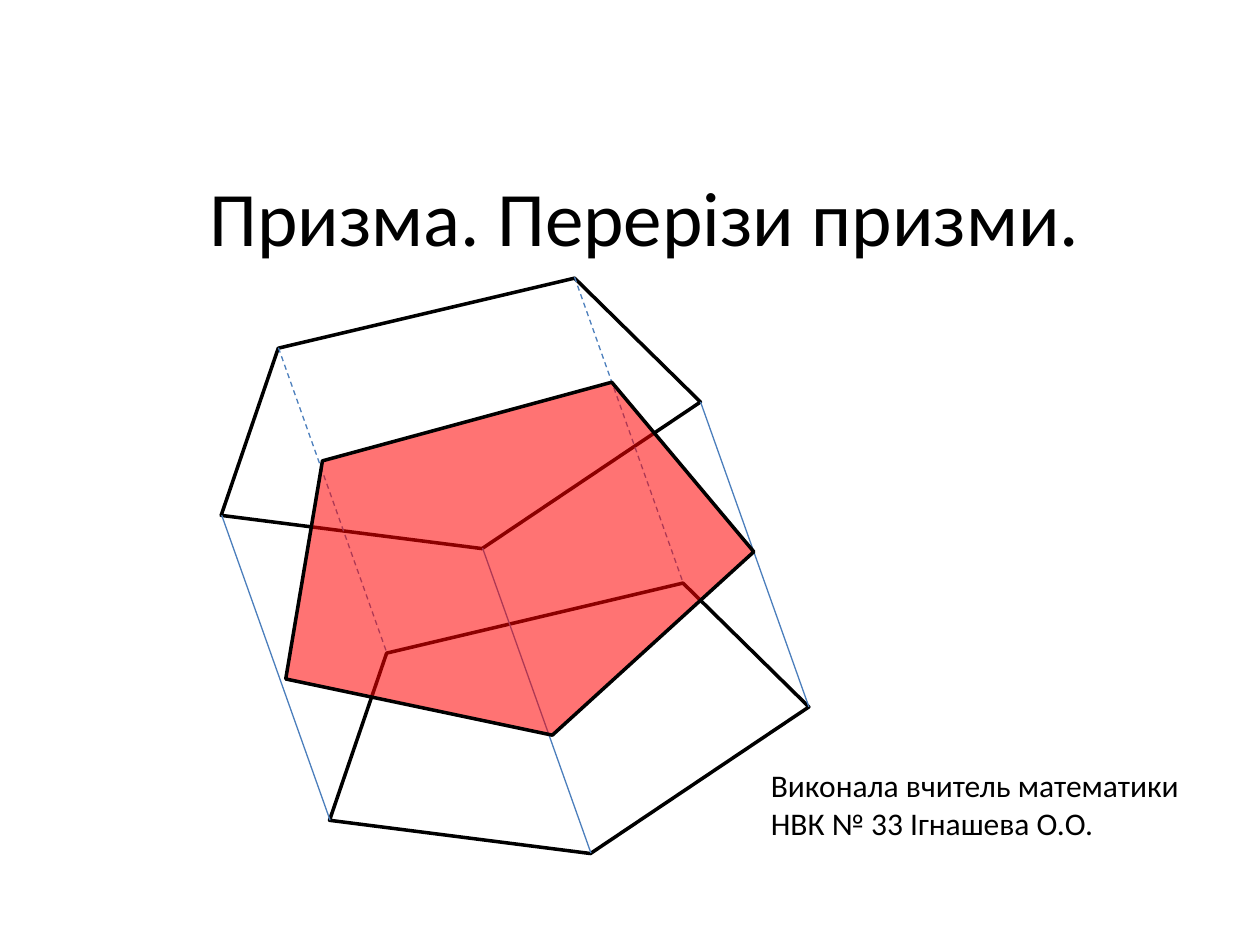
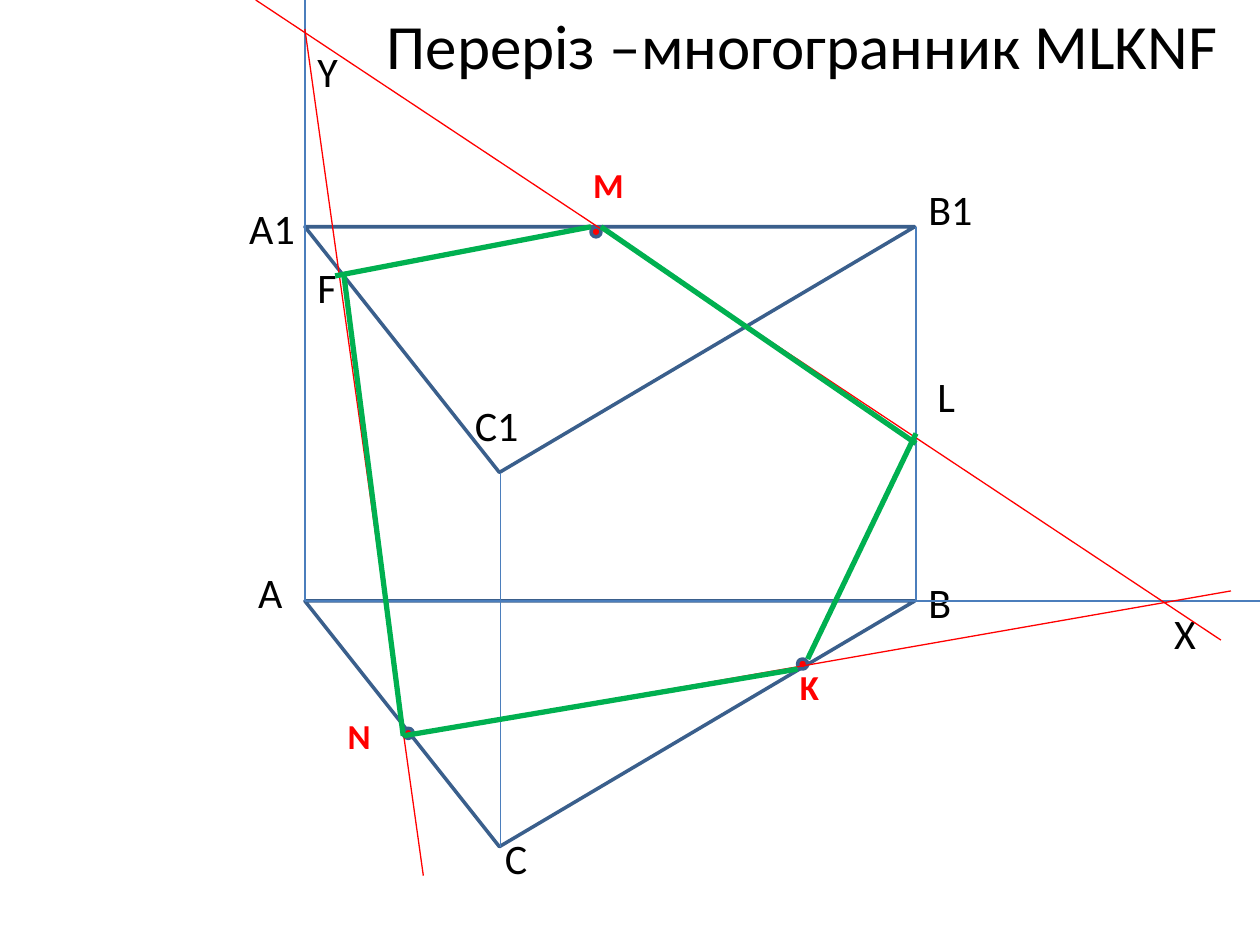
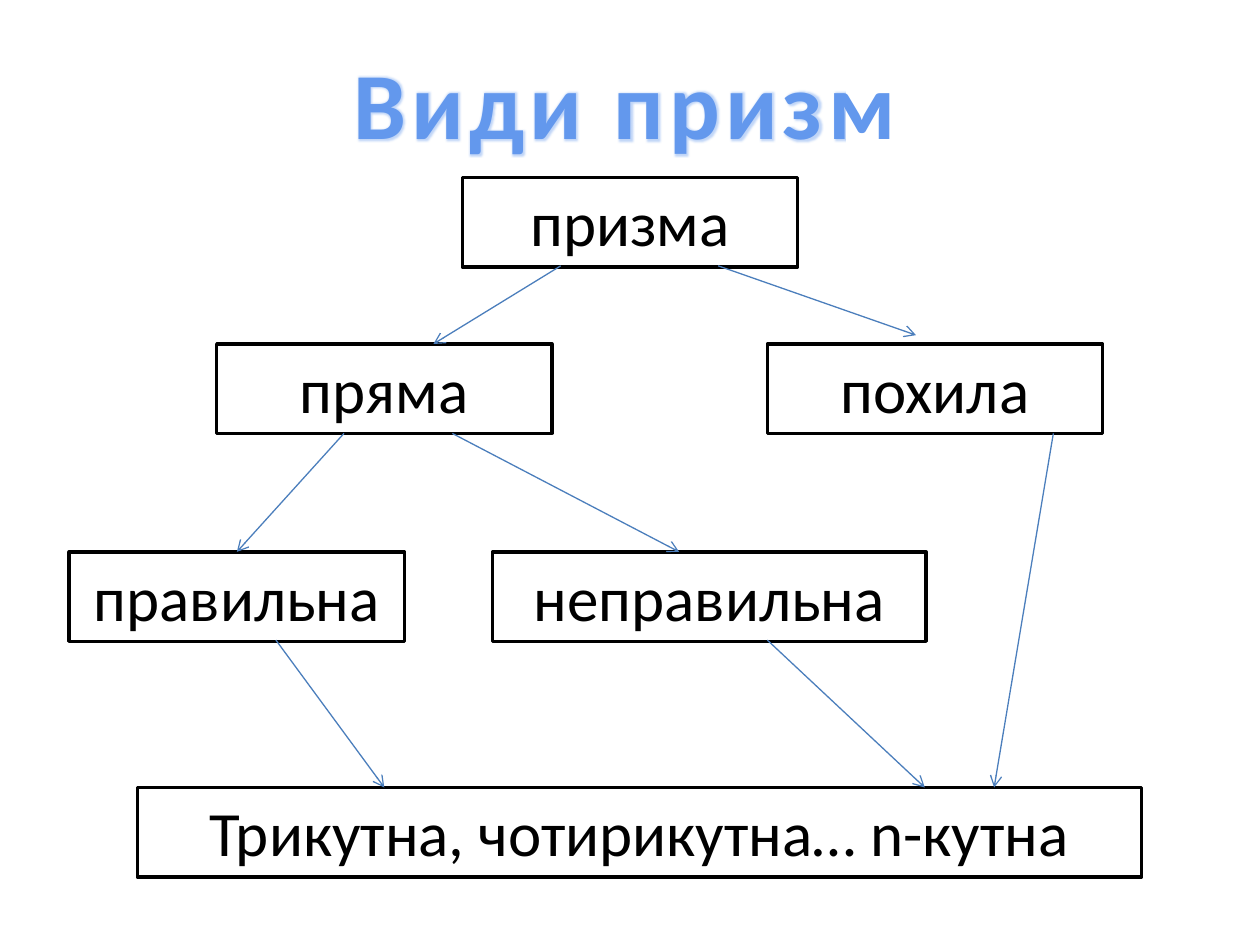
from lxml import etree
from pptx import Presentation
from pptx.dml.color import RGBColor
from pptx.enum import dml, shapes, text
from pptx.oxml import parse_xml
from pptx.oxml.ns import nsdecls, qn
from pptx.util import Inches, Pt

FONT = "Calibri"
BLACK = RGBColor(0x00, 0x00, 0x00)
RED = RGBColor(0xFF, 0x00, 0x00)
GREEN = RGBColor(0x00, 0xB0, 0x50)
LINE_BLUE = RGBColor(0x4B, 0x7E, 0xBC)
SHAPE_BLUE = RGBColor(0x3A, 0x5F, 0x8C)
TITLE_STOPS = ((0.10, RGBColor(0x63, 0x98, 0xED)), (0.75, RGBColor(0x26, 0x5E, 0xA0)))

# Slide 1: an oblique pentagonal prism cut by a plane
BASE_BOX = (1.65, 2.46, 3.91, 1.92)
BASE_TURN = 166.7
SECTION_BOX = (2.12, 3.3, 3.85, 2.58)
SECTION_TURN = 164.8
LATERAL = (0.86, 2.42)
VISIBLE_TOPS = [(5.56, 3.19), (3.83, 4.35), (1.76, 4.09)]
HIDDEN_TOPS = [(2.21, 2.76), (4.56, 2.2)]

# Slide 2: a triangular prism and its section through M, N, K
A1, B1, C1 = (2.42, 1.8), (7.27, 1.8), (3.97, 3.75)
PRISM_HEIGHT = 2.97
BASE_WIDTH, BASE_DEPTH, APEX = 4.84, 1.95, 0.319
VERTEX_LABELS = [
    ("А1", 1.88, 1.56, 0.7), ("С", 3.91, 6.56, 0.7), ("В", 7.27, 4.53, 0.7),
    ("А", 1.95, 4.45, 0.7), ("С1", 3.67, 3.12, 0.7), ("В1", 7.27, 1.41, 0.7),
    ("Х", 9.22, 4.77, 0.78), ("L", 7.34, 2.89, 0.55), ("Y", 2.42, 0.31, 0.86),
    ("F", 2.42, 2.03, 0.39),
]
GIVEN_POINTS = [  # label, label corner, dot corner
    ("М", (4.61, 1.25), (4.69, 1.8)),
    ("N", (2.66, 5.62), (3.2, 5.78)),
    ("K", (6.25, 5.23), (6.33, 5.23)),
]
DOT = 0.08
EXTENSIONS = [((2.42, 4.77), (10, 4.77)), ((2.42, 4.77), (2.42, 0))]
TRACES = [((3.2, 5.84), (9.77, 4.69)), ((9.69, 5.08), (2.03, 0)), ((2.42, 0.23), (3.36, 6.95))]
SECTION_SIDES = [
    ((4.69, 1.8), (2.66, 2.19)), ((7.27, 3.44), (6.41, 5.23)), ((7.27, 3.52), (4.77, 1.8)),
    ((3.2, 5.84), (6.33, 5.31)), ((2.73, 2.19), (3.2, 5.84)),
]

# Slide 3: the kinds of prism
KIND_HEIGHT = 0.71
KINDS = [  # text, left, top, width
    ("призма", 3.67, 1.41, 2.66),
    ("пряма", 1.72, 2.73, 2.66),
    ("похила", 6.09, 2.73, 2.66),
    ("неправильна", 3.91, 4.38, 3.44),
    ("правильна", 0.55, 4.38, 2.66),
    ("Трикутна, чотирикутна… n-кутна", 1.09, 6.25, 7.97),
]
KIND_ARROWS = [  # from, to, kind whose top middle is reached
    ((5.7, 2.11), (7.27, 2.66), None),
    ((4.45, 2.11), (3.44, 2.73), None),
    ((3.59, 3.44), (5.39, 4.38), None),
    ((2.73, 3.44), (1.88, 4.38), "правильна"),
    ((6.09, 5.08), (7.34, 6.25), None),
    ((8.36, 3.44), (7.89, 6.25), None),
    ((2.19, 5.08), (3.05, 6.25), None),
]


def write(shape, words, size, color=BLACK, bold=None, align=None, anchor=text.MSO_ANCHOR.TOP):
    frame = shape.text_frame
    frame.word_wrap = True
    frame.vertical_anchor = anchor
    paragraph = frame.paragraphs[0]
    paragraph.alignment = align
    run = paragraph.add_run()
    run.text = words
    font = run.font
    font.name, font.size, font.bold = FONT, Pt(size), bold
    font.color.rgb = color
    return run


def add_text(slide, box, words, size, **style):
    return write(slide.shapes.add_textbox(*map(Inches, box)), words, size, **style)


def add_outline(slide, preset, box, color, fill=None):
    """Add a preset shape with a 2 pt line, unfilled unless a fill is given."""
    shape = slide.shapes.add_shape(preset, *map(Inches, box))
    shape.shadow.inherit = False
    shape.line.color.rgb = color
    shape.line.width = Pt(2)
    if fill is None:
        shape.fill.background()
    else:
        shape.fill.solid()
        shape.fill.fore_color.rgb = fill
    return shape


def add_line(slide, start, end, color=LINE_BLUE, width=0.75, dashed=False):
    line = slide.shapes.add_connector(
        shapes.MSO_CONNECTOR.STRAIGHT, *map(Inches, (*start, *end)))
    line.line.color.rgb = color
    line.line.width = Pt(width)
    if dashed:
        line.line.dash_style = dml.MSO_LINE.DASH
    etree.SubElement(line.element.spPr, qn("a:effectLst"))
    return line


def shifted(point, dx, dy):
    return point[0] + dx, point[1] + dy


def build_cover(slide):
    add_text(slide, (0.62, 1.09, 9, 1.25), "Призма. Перерізи призми.", 44,
             align=text.PP_ALIGN.CENTER, anchor=text.MSO_ANCHOR.MIDDLE)
    pentagon = shapes.MSO_SHAPE.REGULAR_PENTAGON
    left, top, width, height = BASE_BOX
    for corner in ((left, top), shifted((left, top), *LATERAL)):
        add_outline(slide, pentagon, (*corner, width, height), BLACK).rotation = BASE_TURN
    for vertices, dashed in ((VISIBLE_TOPS, False), (HIDDEN_TOPS, True)):
        for vertex in vertices:
            add_line(slide, vertex, shifted(vertex, *LATERAL), dashed=dashed)
    section = add_outline(slide, pentagon, SECTION_BOX, BLACK, RED)
    section.rotation = SECTION_TURN
    fill_color = section.element.spPr.find(qn("a:solidFill"))[0]
    etree.SubElement(fill_color, qn("a:alpha")).set("val", "55000")
    add_text(slide, (6.02, 6.03, 3.54, 1.01),
             "Виконала вчитель математики НВК № 33 Ігнашева О.О.", 18)


def build_section(slide):
    for dy in (0, PRISM_HEIGHT):
        base = add_outline(slide, shapes.MSO_SHAPE.ISOSCELES_TRIANGLE,
                           (*shifted(A1, 0, dy), BASE_WIDTH, BASE_DEPTH), SHAPE_BLUE)
        base.adjustments[0] = APEX
        base.element.spPr.find(qn("a:xfrm")).set("flipV", "1")
    for vertex in (B1, C1, A1):
        add_line(slide, vertex, shifted(vertex, 0, PRISM_HEIGHT))
    for words, left, top, width in VERTEX_LABELS:
        add_text(slide, (left, top, width, 0.51), words, 24)
    for words, label_corner, dot_corner in GIVEN_POINTS:
        add_outline(slide, shapes.MSO_SHAPE.OVAL, (*dot_corner, DOT, DOT), SHAPE_BLUE, RED)
        add_text(slide, (*label_corner, 0.55, 0.44), words, 20, color=RED, bold=True)
    for lines, color, width in ((EXTENSIONS, LINE_BLUE, 0.75), (TRACES, RED, 0.75),
                                (SECTION_SIDES, GREEN, 3)):
        for start, end in lines:
            add_line(slide, start, end, color, width)
    add_text(slide, (2.97, 0, 7.03, 0.71), "Переріз –многогранник MLKNF", 36)


def decorate(run):
    """Give a run a gradient, a thin pale outline, a soft glow and wide spacing."""
    fill = run.font.fill
    fill.gradient()
    fill.gradient_angle = 270
    for stop, (position, color) in zip(fill.gradient_stops, TITLE_STOPS):
        stop.position = position
        stop.color.rgb = color
    properties = run.font.fill and run._r.get_or_add_rPr()
    properties.set("spc", "300")
    properties.insert(0, parse_xml(
        f'<a:ln {nsdecls("a")} w="11430"><a:solidFill><a:srgbClr val="F4F6F9"/>'
        '</a:solidFill></a:ln>'))
    properties.find(qn("a:gradFill")).addnext(parse_xml(
        f'<a:effectLst {nsdecls("a")}><a:glow rad="38100"><a:srgbClr val="6398ED">'
        '<a:alpha val="40000"/></a:srgbClr></a:glow></a:effectLst>'))


def build_kinds(slide):
    decorate(add_text(slide, (2.03, 0.31, 5.86, 1.02), "Види призм", 54,
                      bold=True, align=text.PP_ALIGN.CENTER))
    boxes = {}
    for words, left, top, width in KINDS:
        box = add_outline(slide, shapes.MSO_SHAPE.RECTANGLE,
                          (left, top, width, KIND_HEIGHT), BLACK)
        write(box, words, 36, align=text.PP_ALIGN.CENTER)
        boxes[words] = box
    for start, end, target in KIND_ARROWS:
        arrow = add_line(slide, start, end)
        if target:
            arrow.end_connect(boxes[target], 0)
        outline = arrow.element.spPr.find(qn("a:ln"))
        etree.SubElement(outline, qn("a:tailEnd")).set("type", "arrow")


def main():
    presentation = Presentation()
    presentation.slide_width, presentation.slide_height = Inches(10), Inches(7.5)
    for build in (build_cover, build_section, build_kinds):
        build(presentation.slides.add_slide(presentation.slide_layouts[6]))
    presentation.save("out.pptx")


if __name__ == "__main__":
    main()
